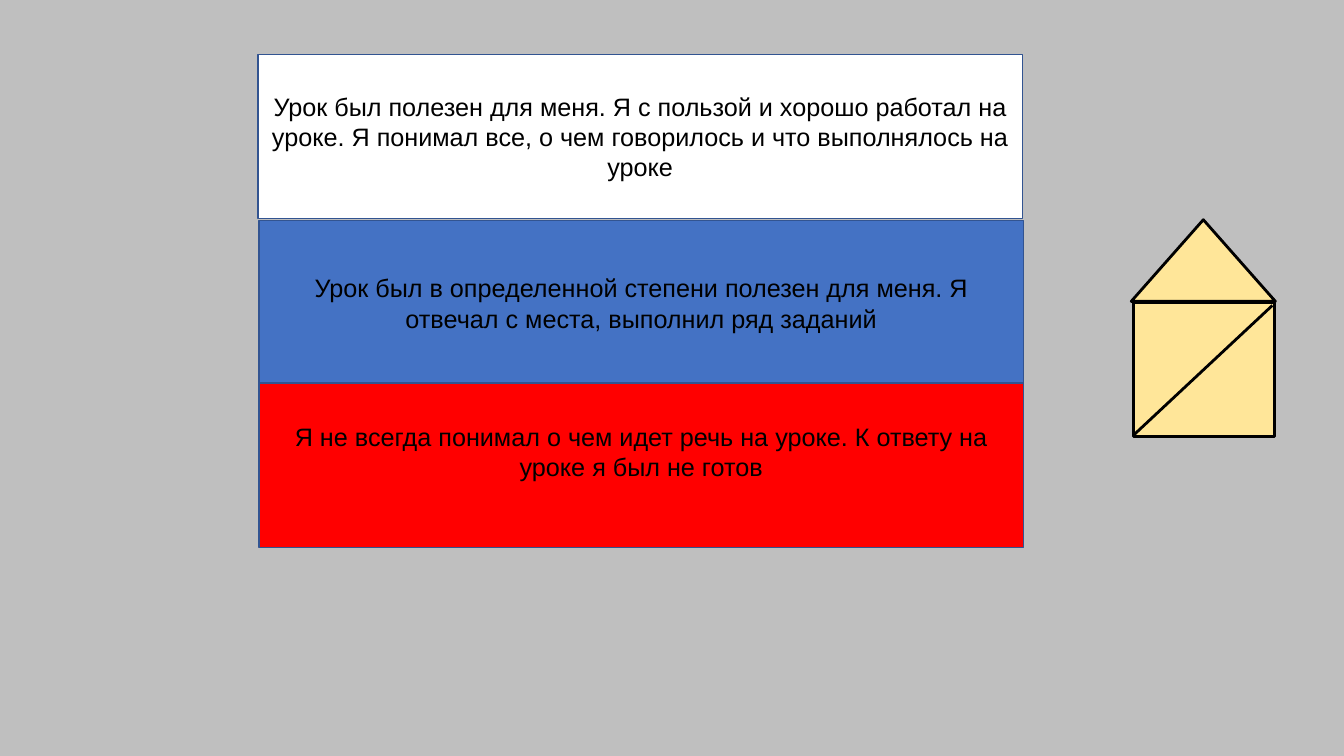
from pptx import Presentation
from pptx.dml.color import RGBColor
from pptx.enum import shapes, text
from pptx.oxml.ns import qn
from pptx.util import Inches, Pt

# Content: left, top, fill, bottom inset, wording
STRIPES = [
    (2.56, 0.54, "FFFFFF", 0.05,
     "Урок был полезен для меня. Я с пользой и хорошо работал на уроке. "
     "Я понимал все, о чем говорилось и что выполнялось на уроке"),
    (2.57, 2.19, "4472C4", 0.05,
     "Урок был в определенной степени полезен для меня. "
     "Я отвечал с места, выполнил ряд заданий"),
    (2.57, 3.8, "FF0000", 0.32,
     "Я не всегда понимал о чем идет речь на уроке. "
     "К ответу на уроке я был не готов"),
]
STRIPE_SIZE = (7.58, 1.63)
WALLS = (11.24, 3, 1.4, 1.33)
ROOF = (11.22, 2.18, 1.43, 0.81)
DIAGONAL = (11.24, 4.32, 12.62, 3.03)


def paint(target, color):
    target.solid()
    target.fore_color.rgb = RGBColor.from_string(color)


def add_block(page, kind, place, fill, line, width):
    block = page.shapes.add_shape(kind, *map(Inches, place))
    block.shadow.inherit = False
    paint(block.fill, fill)
    paint(block.line.fill, line)
    block.line.width = Pt(width)
    return block


def add_stripe(page, left, top, fill, inset, wording):
    stripe = add_block(page, shapes.MSO_SHAPE.RECTANGLE,
                       (left, top, *STRIPE_SIZE), fill, "325491", 1)
    frame = stripe.text_frame
    frame.word_wrap = True
    frame.vertical_anchor = text.MSO_ANCHOR.MIDDLE
    frame.margin_bottom = Inches(inset)
    para = frame.paragraphs[0]
    para.text = wording
    para.alignment = text.PP_ALIGN.CENTER
    para.font.name = "Arial"
    para.font.size = Pt(18)
    paint(para.font.fill, "000000")


def add_house(page):
    add_block(page, shapes.MSO_SHAPE.RECTANGLE, WALLS, "FFE699", "000000", 2)
    diagonal = page.shapes.add_connector(
        shapes.MSO_CONNECTOR.STRAIGHT, *map(Inches, DIAGONAL))
    paint(diagonal.line.fill, "000000")
    diagonal.line.width = Pt(2)
    properties = diagonal.element.spPr
    properties.append(properties.makeelement(qn("a:effectLst"), {}))
    add_block(page, shapes.MSO_SHAPE.ISOSCELES_TRIANGLE, ROOF,
              "FFE699", "000000", 2)


def main():
    deck = Presentation()
    deck.slide_width, deck.slide_height = Inches(13.33), Inches(7.5)
    page = deck.slides.add_slide(deck.slide_layouts[6])
    paint(page.background.fill, "BFBFBF")

    # Flag with one answer per stripe
    for stripe in STRIPES:
        add_stripe(page, *stripe)

    # House of geometric figures
    add_house(page)
    deck.save("out.pptx")


if __name__ == "__main__":
    main()
